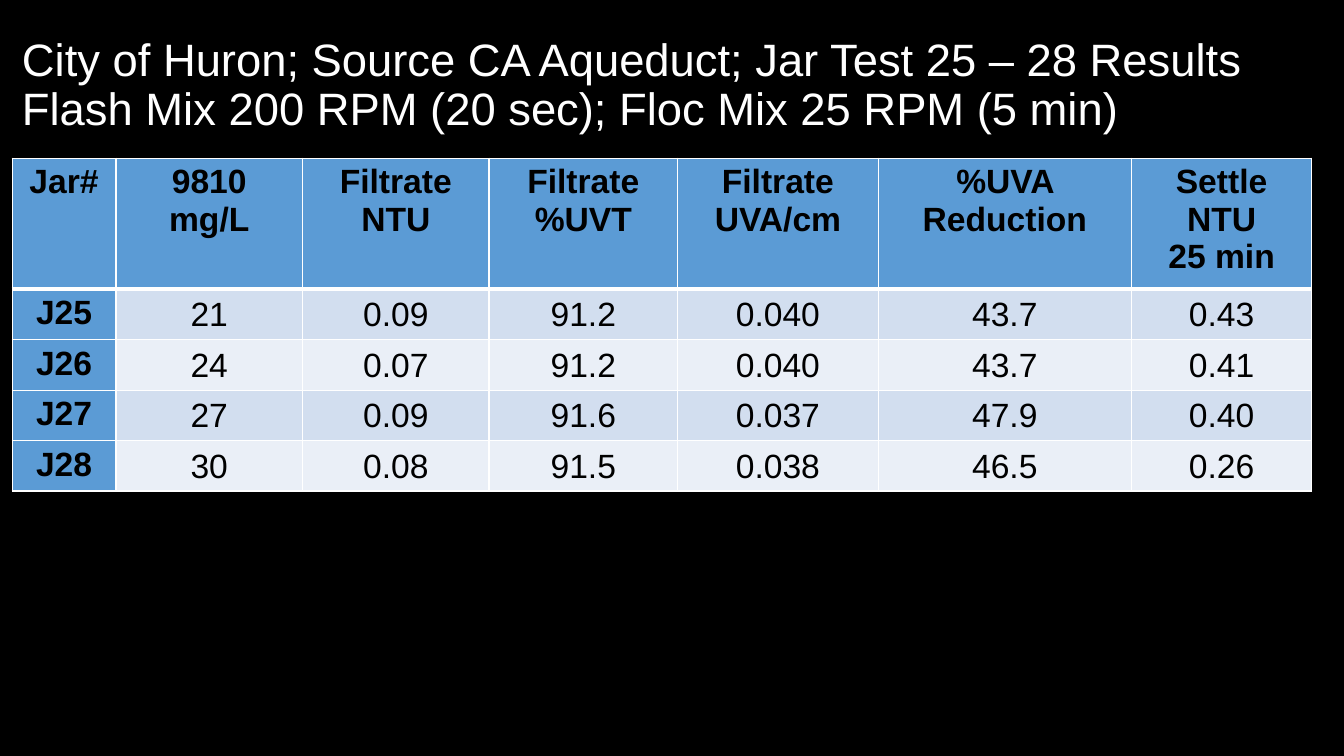
from pptx import Presentation
from pptx.dml.color import RGBColor
from pptx.enum.text import MSO_ANCHOR, PP_ALIGN
from pptx.oxml import parse_xml
from pptx.oxml.ns import nsdecls
from pptx.util import Inches, Pt

BLACK = RGBColor(0x00, 0x00, 0x00)
WHITE = RGBColor(0xFF, 0xFF, 0xFF)
BLUE = RGBColor(0x5B, 0x9B, 0xD5)
BANDS = (RGBColor(0xD2, 0xDE, 0xEF), RGBColor(0xEA, 0xEF, 0xF7))

TITLE = ("City of Huron; Source CA Aqueduct; Jar Test 25 – 28 Results",
         "Flash Mix 200 RPM (20 sec); Floc Mix 25 RPM (5 min)")
HEADS = ("Jar#", "9810\nmg/L", "Filtrate\nNTU", "Filtrate\n%UVT",
         "Filtrate\nUVA/cm", "%UVA Reduction", "Settle\nNTU\n25 min")
JARS = (
    ("J25", "21", "0.09", "91.2", "0.040", "43.7", "0.43"),
    ("J26", "24", "0.07", "91.2", "0.040", "43.7", "0.41"),
    ("J27", "27", "0.09", "91.6", "0.037", "47.9", "0.40"),
    ("J28", "30", "0.08", "91.5", "0.038", "46.5", "0.26"),
)
# Percent of the slide's width and height
WIDTHS = (7.73, 13.88, 13.88, 14.03, 14.93, 18.83, 13.43)
HEIGHTS = (16.27,) + (6.27,) * len(JARS)


class Deck:
    """Holds the style and the slide; lengths are percent of the slide."""
    font = "Arial"
    big = 32.4
    body = 24

    def __init__(self):
        self.prs = Presentation()
        self.prs.slide_width = Inches(13.33)
        self.prs.slide_height = Inches(7.5)
        self.slide = self.prs.slides.add_slide(self.prs.slide_layouts[6])
        back = self.slide.background.fill
        back.solid()
        back.fore_color.rgb = BLACK

    def wide(self, share):
        return round(self.prs.slide_width * share / 100)

    def high(self, share):
        return round(self.prs.slide_height * share / 100)

    def box(self, x, y, w, h):
        return self.wide(x), self.high(y), self.wide(w), self.high(h)

    def run(self, para, text, size, color, bold=False):
        run = para.add_run()
        run.text = text
        run.font.name = self.font
        run.font.size = Pt(size)
        run.font.bold = bold
        run.font.color.rgb = color

    def title(self, lines, *place):
        frame = self.slide.shapes.add_textbox(*self.box(*place)).text_frame
        frame.word_wrap = True
        frame.vertical_anchor = MSO_ANCHOR.MIDDLE
        para = frame.paragraphs[0]
        para.line_spacing = 0.9
        for i, line in enumerate(lines):
            if i:
                para.add_line_break()
            self.run(para, line, self.big, WHITE)

    def border(self, cell, **sides):
        props = cell._tc.get_or_add_tcPr()
        for side, points in sides.items():
            props.append(parse_xml(
                f'<a:ln{side} {nsdecls("a")} w="{Pt(points)}"><a:solidFill>'
                f'<a:srgbClr val="{WHITE}"/></a:solidFill></a:ln{side}>'))

    def cell(self, cell, text, fill, bold):
        for i, line in enumerate(text.split("\n")):
            frame = cell.text_frame
            para = frame.add_paragraph() if i else frame.paragraphs[0]
            para.alignment = PP_ALIGN.CENTER
            self.run(para, line, self.body, BLACK, bold)
        cell.fill.solid()
        cell.fill.fore_color.rgb = fill

    def table(self, rows, x, y):
        place = self.box(x, y, sum(WIDTHS), sum(HEIGHTS))
        grid = self.slide.shapes.add_table(len(rows), len(WIDTHS), *place).table
        for col, share in zip(grid.columns, WIDTHS):
            col.width = self.wide(share)
        for r, (row, share) in enumerate(zip(rows, HEIGHTS)):
            grid.rows[r].height = self.high(share)
            for c, text in enumerate(row):
                cell = grid.cell(r, c)
                label = r == 0 or c == 0
                # The rule under the header row is thicker
                self.border(cell, L=1, R=1, T=3 if r == 1 else 1,
                            B=3 if r == 0 else 1)
                if not label:
                    cell.vertical_anchor = MSO_ANCHOR.MIDDLE
                    cell.margin_left = cell.margin_right = Inches(0.01)
                    cell.margin_top = Inches(0.01)
                    cell.margin_bottom = 0
                fill = BLUE if label else BANDS[(r - 1) % 2]
                self.cell(cell, text, fill, label)


def main():
    deck = Deck()
    # Heading
    deck.title(TITLE, 0.9, 1.73, 97.75, 19.33)
    # Jar test results
    deck.table((HEADS,) + JARS, 0.9, 20.93)
    deck.prs.save("out.pptx")


if __name__ == "__main__":
    main()
